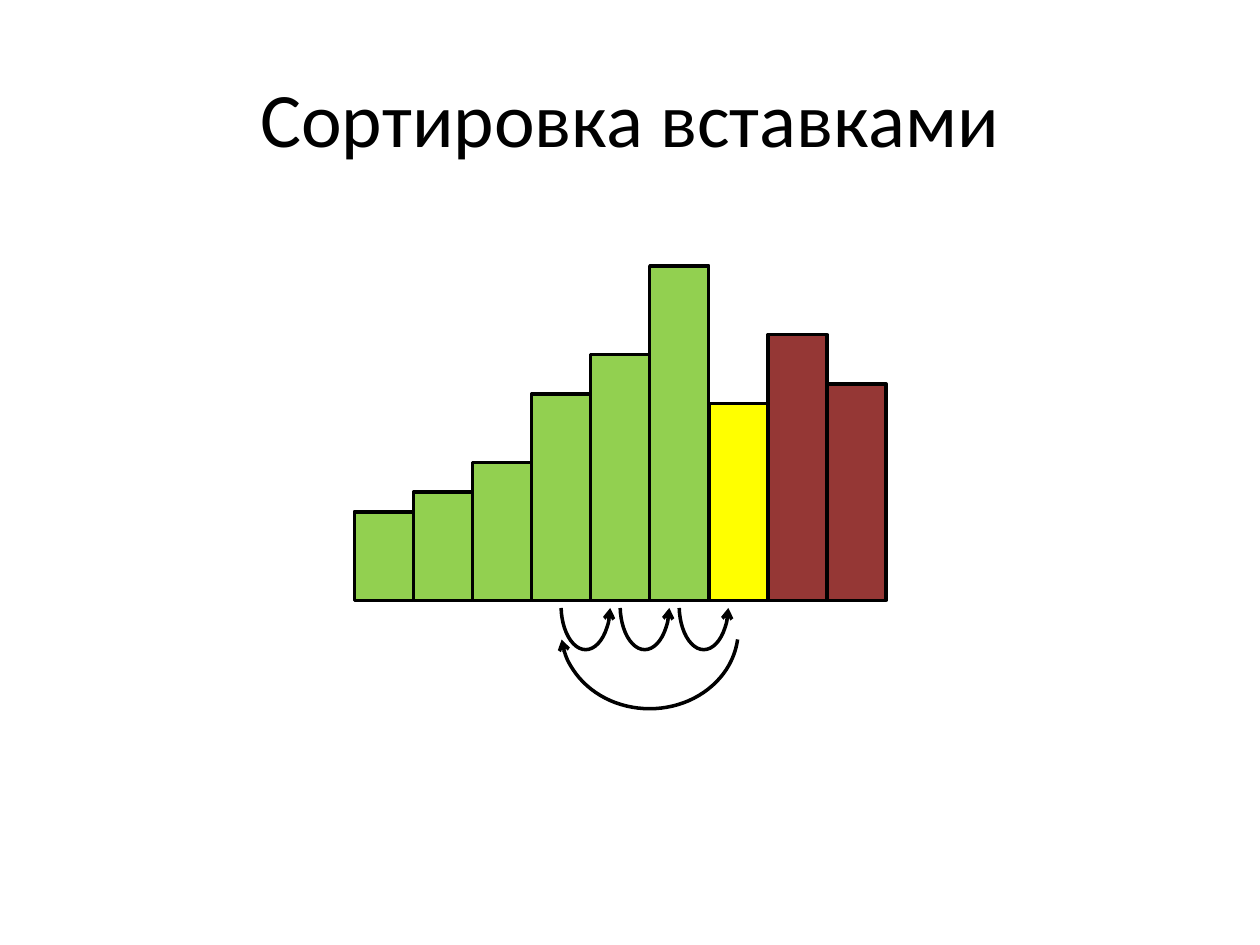
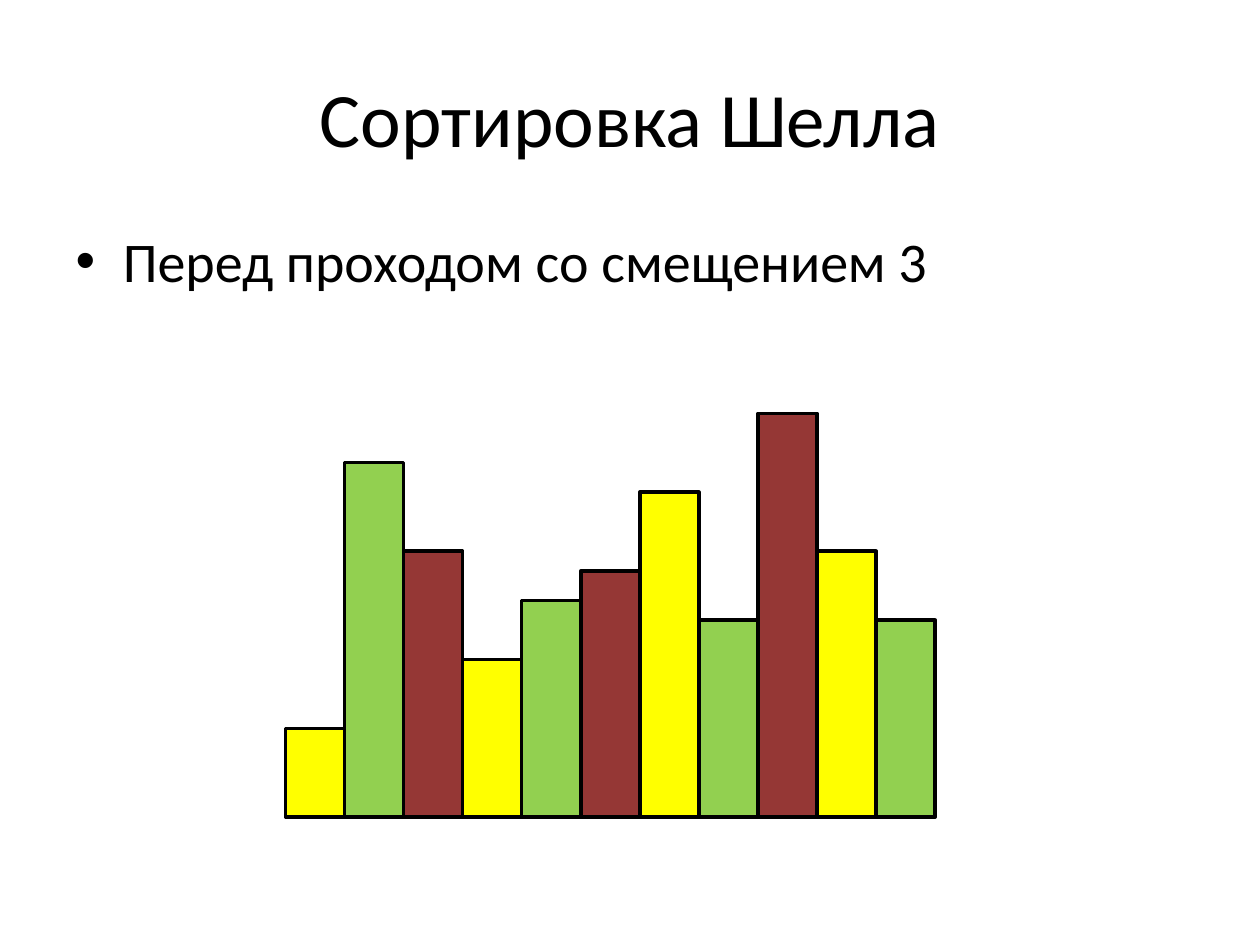
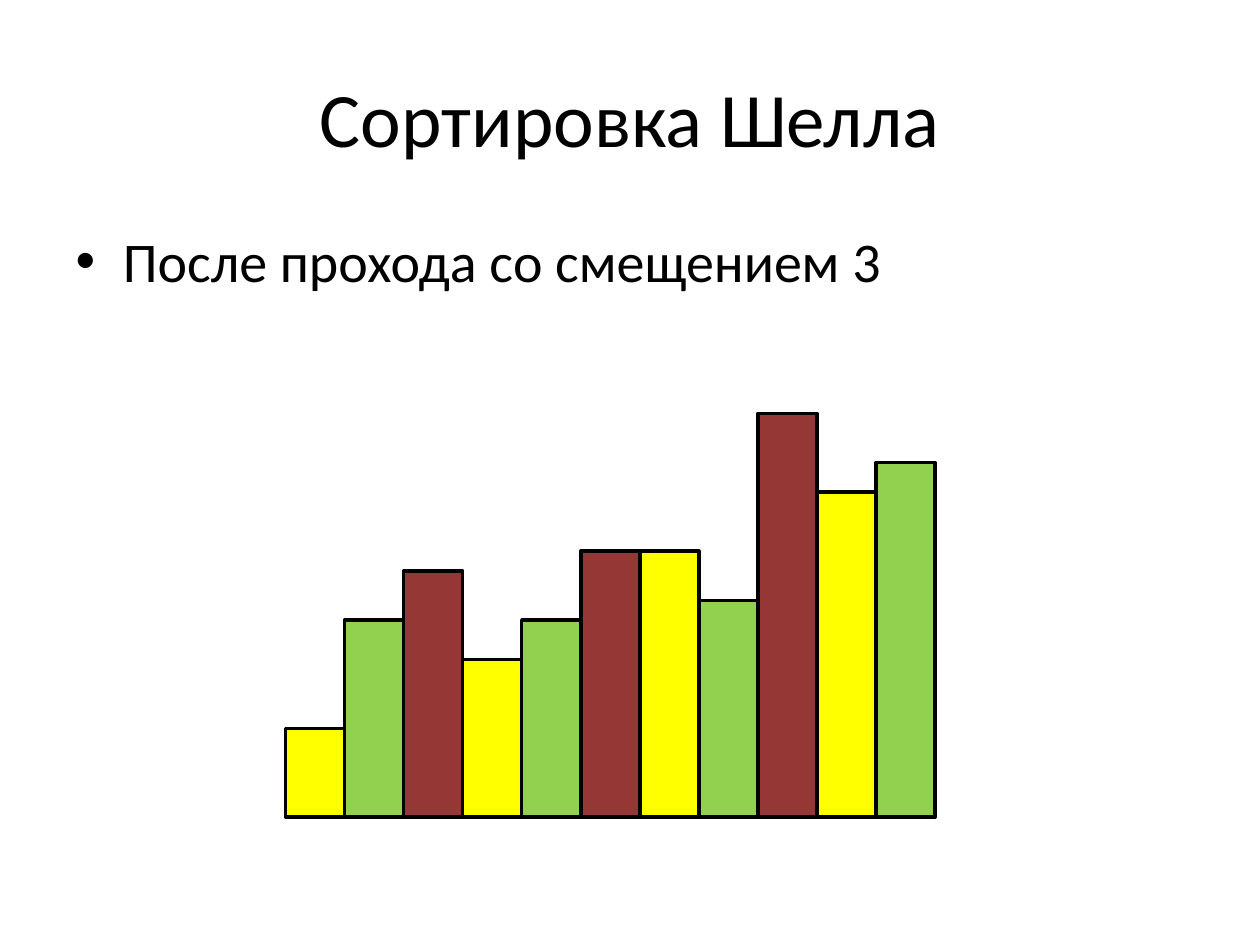
"""Build three slides that show insertion sort and Shell sort as coloured bars."""
import pptx
import pptx.dml.color
import pptx.enum.shapes
import pptx.enum.text
import pptx.oxml.ns
import pptx.util
from lxml import etree

Inches = pptx.util.Inches
MSO_SHAPE = pptx.enum.shapes.MSO_SHAPE
PP_ALIGN = pptx.enum.text.PP_ALIGN

BLACK, GREEN, YELLOW, RED = "000000", "92D050", "FFFF00", "953735"
UNIT = 5 / 64
BAR_WIDTH = 6
TITLE_ONLY, TITLE_AND_BODY = 5, 1


def rgb(value):
    return pptx.dml.color.RGBColor.from_string(value)


def write(sp, text, size=32, font="Calibri", color=BLACK, align=PP_ALIGN.LEFT):
    p = sp.text_frame.paragraphs[0]
    p.alignment = align
    r = p.add_run()
    r.text = text
    r.font.size = pptx.util.Pt(size)
    r.font.name = font
    r.font.color.rgb = rgb(color)


prs = pptx.Presentation()
prs.slide_width = Inches(10)
prs.slide_height = Inches(7.5)

shell_colors = ([YELLOW, GREEN, RED] * 4)[:11]
slides = [
    ("Сортировка вставками", None, 36, 61,
     [9, 11, 14, 21, 25, 34, 20, 27, 22],
     [GREEN] * 6 + [YELLOW] + [RED] * 2),
    ("Сортировка Шелла", "Перед проходом со смещением 3", 29, 83,
     [9, 36, 27, 16, 22, 25, 33, 20, 41, 27, 20], shell_colors),
    ("Сортировка Шелла", "После прохода со смещением 3", 29, 83,
     [9, 20, 25, 16, 20, 27, 27, 22, 41, 33, 36], shell_colors),
]

for title, body, left, baseline, heights, colors in slides:
    layout = TITLE_AND_BODY if body else TITLE_ONLY
    s = prs.slides.add_slide(prs.slide_layouts[layout])
    sp = s.shapes.title
    sp.left, sp.top, sp.width, sp.height = map(Inches, (0.5, 0.3, 9, 1.25))
    write(sp, title, size=44, align=PP_ALIGN.CENTER)
    if body:
        sp = s.placeholders[1]
        sp.left, sp.top, sp.width, sp.height = map(Inches, (0.5, 1.75, 9, 4.95))
        write(sp, body)
    for i, (height, color) in enumerate(zip(heights, colors)):
        box = (left + i * BAR_WIDTH, baseline - height, BAR_WIDTH, height)
        sp = s.shapes.add_shape(MSO_SHAPE.RECTANGLE, *[Inches(v * UNIT) for v in box])
        sp.fill.solid()
        sp.fill.fore_color.rgb = rgb(color)

insert_arc = (57, 56, 18, 16, "a:tailEnd")
shift_arcs = [(57 + i * BAR_WIDTH, 57, 5, 9, "a:headEnd") for i in range(3)]
for *box, arrow_end in [insert_arc] + shift_arcs:
    sp = prs.slides[0].shapes.add_shape(MSO_SHAPE.ARC, *[Inches(v * UNIT) for v in box])
    sp.adjustments[0] = 3.67
    sp.adjustments[1] = 104.32
    sp.fill.background()
    ln = sp.line._get_or_add_ln()
    etree.SubElement(ln, pptx.oxml.ns.qn(arrow_end), type="arrow")

for s in prs.slides:
    for sp in s.shapes:
        if not sp.is_placeholder:
            sp.shadow.inherit = False
            sp.line.color.rgb = rgb(BLACK)
            sp.line.width = pptx.util.Pt(2)

prs.save("out.pptx")
